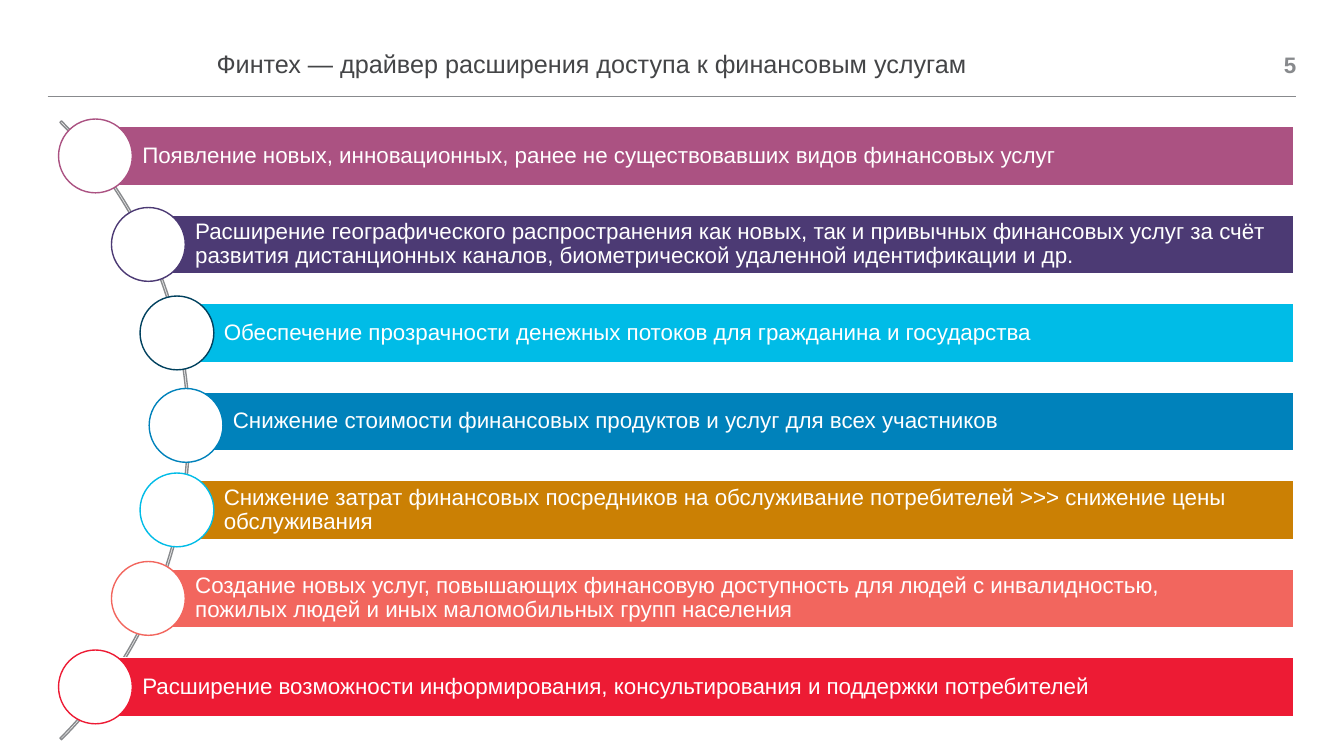
"""Build the slide about fintech widening access to financial services."""
from dataclasses import dataclass
from math import sqrt

from lxml import etree
from pptx import Presentation
from pptx.dml.color import RGBColor
from pptx.enum.shapes import MSO_CONNECTOR, MSO_SHAPE
from pptx.enum.text import MSO_ANCHOR, PP_ALIGN
from pptx.oxml.ns import qn
from pptx.util import Cm, Pt

RECT, OVAL, ARC = MSO_SHAPE.RECTANGLE, MSO_SHAPE.OVAL, MSO_SHAPE.BLOCK_ARC
STRAIGHT = MSO_CONNECTOR.STRAIGHT
MIDDLE = MSO_ANCHOR.MIDDLE
LEFT, RIGHT = PP_ALIGN.LEFT, PP_ALIGN.RIGHT


@dataclass(frozen=True)
class Theme:
    """Colours and type sizes of the slide."""
    font: str = "Arial"
    white: str = "FFFFFF"
    grey: str = "888A8D"
    dark: str = "444547"
    plum: str = "AB5282"
    violet: str = "4C3A74"
    cyan: str = "00BCE7"
    navy: str = "00415E"
    blue: str = "0082BB"
    ochre: str = "CB8004"
    coral: str = "F2665E"
    red: str = "ED1B34"
    title_size: int = 18
    body_size: int = 16


class SlideBuilder:
    """Holds the theme and the slide being drawn."""

    def __init__(self, slide, theme):
        self.s = slide
        self.theme = theme

    def shape(self, kind, x, y, w, h, line, fill=None):
        """Add a preset shape with a 1 pt outline."""
        sp = self.s.shapes.add_shape(kind, Cm(x), Cm(y), Cm(w), Cm(h))
        sp.shadow.inherit = False
        if fill:
            sp.fill.solid()
            sp.fill.fore_color.rgb = RGBColor.from_string(fill)
        else:
            sp.fill.background()
        sp.line.color.rgb = RGBColor.from_string(line)
        sp.line.width = Pt(1)
        return sp

    def set_text(self, sp, text, size, color, insets=(0, 0, 0, 0),
                 align=LEFT, bold=False, spacing=0.9):
        """Put one styled paragraph into a shape."""
        tf = sp.text_frame
        tf.word_wrap = True
        tf.vertical_anchor = MIDDLE
        (tf.margin_left, tf.margin_top,
         tf.margin_right, tf.margin_bottom) = map(Cm, insets)
        p = tf.paragraphs[0]
        p.text = text
        p.alignment = align
        p.line_spacing = spacing
        p.font.name = self.theme.font
        p.font.size = Pt(size)
        p.font.bold = bold
        p.font.color.rgb = RGBColor.from_string(color)

    def label(self, x, y, w, h, text, size, color, **style):
        """Add a text box."""
        sp = self.s.shapes.add_textbox(Cm(x), Cm(y), Cm(w), Cm(h))
        self.set_text(sp, text, size, color, **style)

    def rule(self, x1, x2, y):
        """Add a thin horizontal line."""
        cxn = self.s.shapes.add_connector(STRAIGHT, Cm(x1), Cm(y), Cm(x2), Cm(y))
        cxn.line.color.rgb = RGBColor.from_string(self.theme.grey)
        cxn.line.width = Pt(0.5)
        etree.SubElement(cxn._element.spPr, qn("a:effectLst"))

    def arc(self, x, y, size):
        """Add the thin arc that carries the circles."""
        sp = self.shape(ARC, x, y, size, size, self.theme.grey)
        for i, value in enumerate((189, 27, 0.0025)):
            sp.adjustments[i] = value

    def item(self, x, cy, text, fill, ring, drop=0):
        """Add a bar starting at x and the circle centred on its left end."""
        t = self.theme
        bar_h, d, right = 1.49, 1.86, 32.61
        bar = self.shape(RECT, x, cy - bar_h / 2, right - x, bar_h, t.white, fill)
        self.set_text(bar, text, t.body_size, t.white, insets=(1.18, 0.1, 0.1, 0.1))
        self.shape(OVAL, x - d / 2, cy - d / 2 + drop, d, d, ring, t.white)


def main():
    """Draw the slide and save it."""
    t = Theme()
    prs = Presentation()
    prs.slide_width, prs.slide_height = Cm(33.87), Cm(19.05)
    b = SlideBuilder(prs.slides.add_slide(prs.slide_layouts[6]), t)

    b.rule(1.2, 32.67, 2.42)
    b.arc(-17.27, -0.18, 22.05)

    items = [
        ("Появление новых, инновационных, ранее не существовавших видов "
         "финансовых услуг", t.plum, t.plum),
        ("Расширение географического распространения как новых, так и привычных "
         "финансовых услуг за счёт развития дистанционных каналов, биометрической "
         "удаленной идентификации и др.", t.violet, t.violet),
        ("Обеспечение прозрачности денежных потоков для гражданина и государства",
         t.cyan, t.navy),
        ("Снижение стоимости финансовых продуктов и услуг для всех участников",
         t.blue, t.blue, 0.1),
        ("Снижение затрат финансовых посредников на обслуживание потребителей "
         ">>> снижение цены обслуживания", t.ochre, t.cyan),
        ("Создание новых услуг, повышающих финансовую доступность для людей "
         "с инвалидностью,\nпожилых людей и иных маломобильных групп населения",
         t.coral, t.coral),
        ("Расширение возможности информирования, консультирования и поддержки "
         "потребителей", t.red, t.red),
    ]
    pitch, middle_y, radius, centre_x = 2.23, 10.62, 10.94, -6.25
    for i, item in enumerate(items):
        dy = (i - len(items) // 2) * pitch
        b.item(centre_x + sqrt(radius ** 2 - dy ** 2), middle_y + dy, *item)

    b.label(30.61, 1.19, 2.06, 0.89, "5", t.body_size, t.grey,
            align=RIGHT, bold=True, spacing=1.0)
    b.label(5.46, 0.81, 23.16, 1.68,
            "Финтех — драйвер расширения доступа к финансовым услугам",
            t.title_size, t.dark)
    prs.save("out.pptx")


if __name__ == "__main__":
    main()
